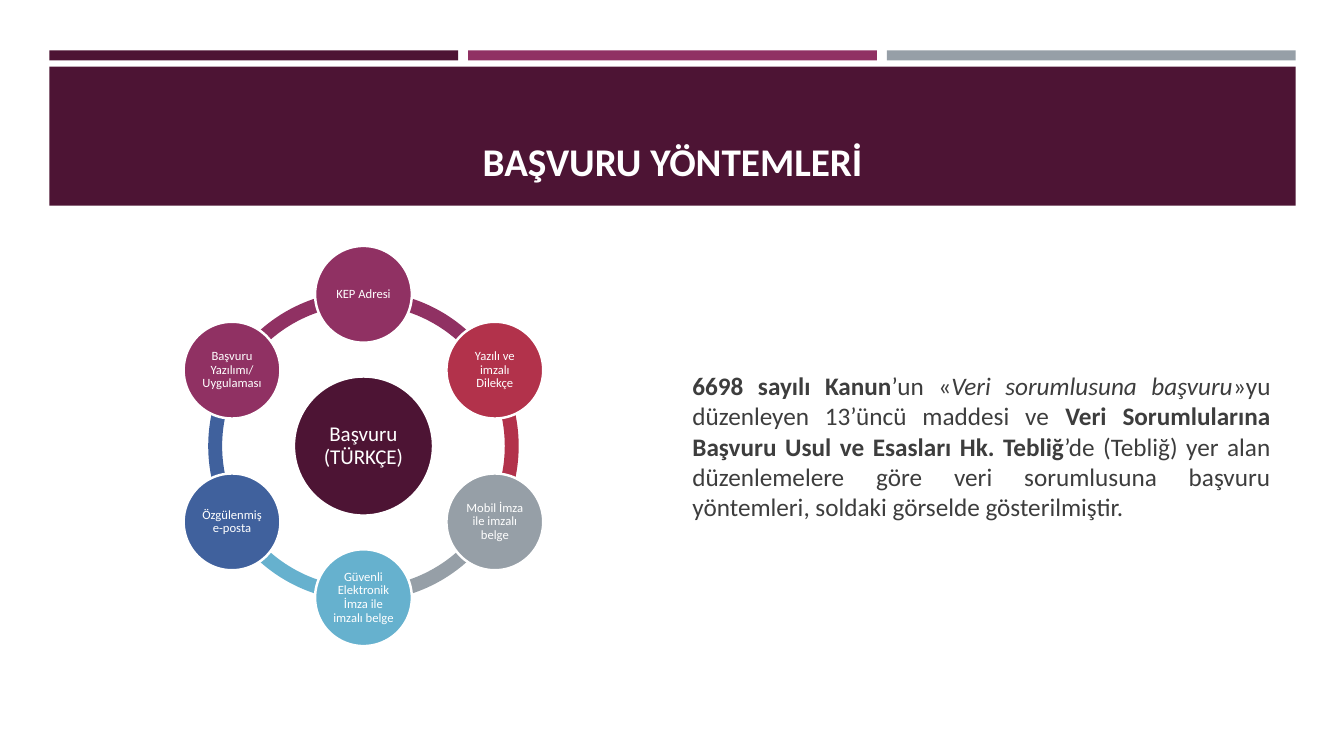
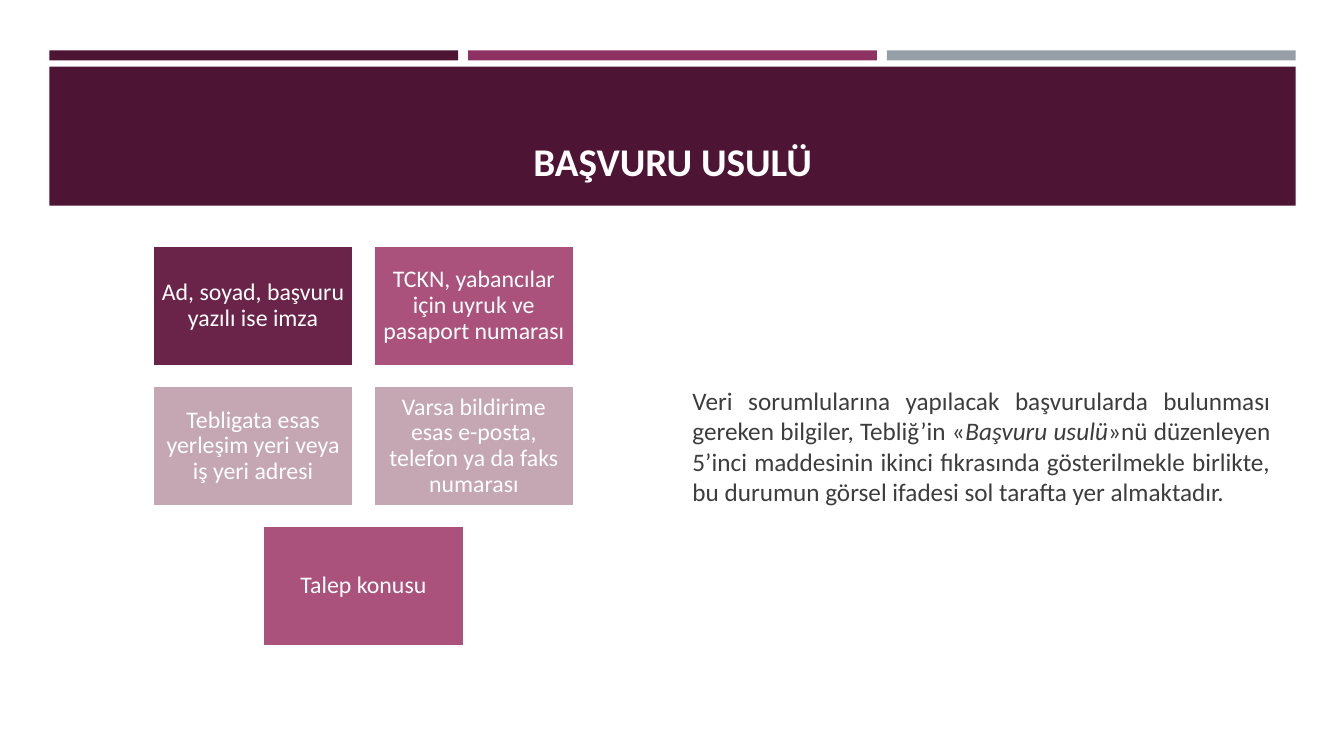
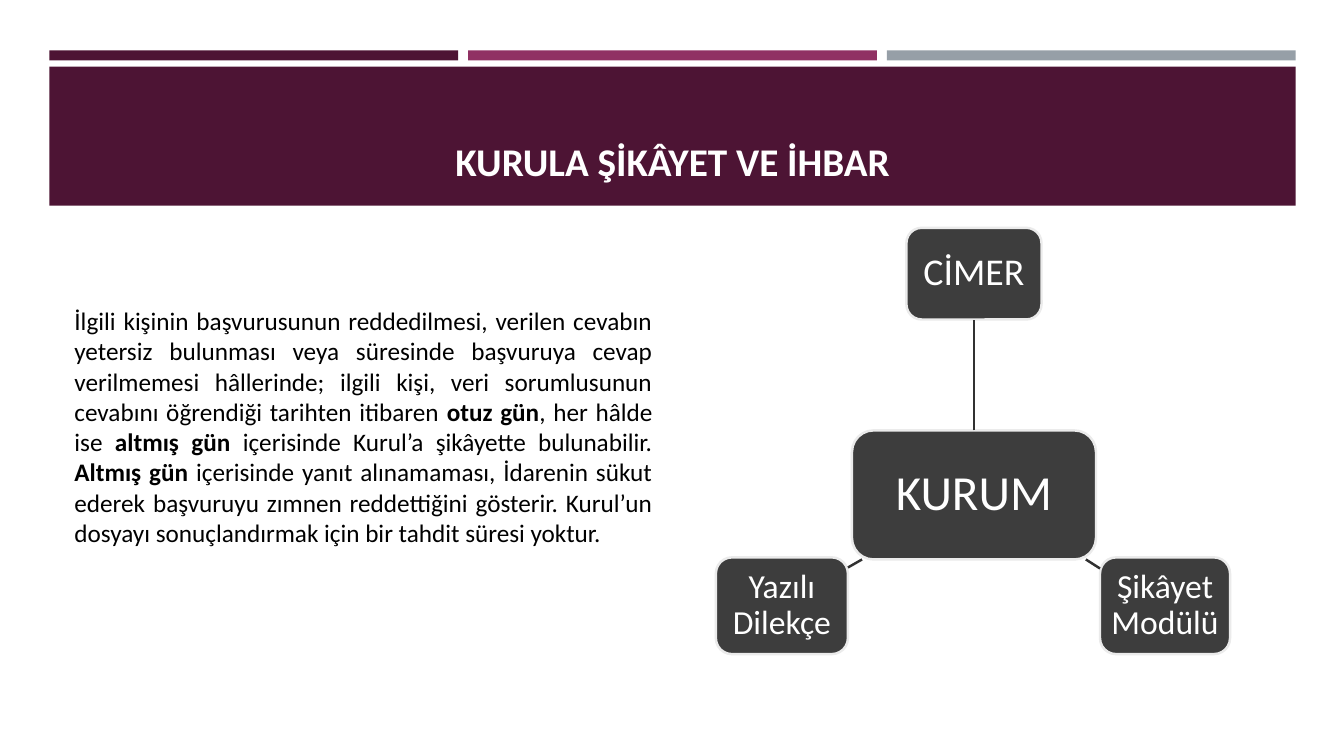
"""Build three slides on applications and complaints to the board."""
from math import cos, radians, sin

from lxml import etree
from pptx import Presentation
from pptx.dml.color import RGBColor
from pptx.enum.shapes import MSO_CONNECTOR, MSO_SHAPE
from pptx.enum.text import MSO_ANCHOR, MSO_AUTO_SIZE, PP_ALIGN
from pptx.oxml.ns import qn
from pptx.util import Pt

RECTANGLE = MSO_SHAPE.RECTANGLE
ROUNDED = MSO_SHAPE.ROUNDED_RECTANGLE
ELLIPSE = MSO_SHAPE.OVAL
ARC = MSO_SHAPE.BLOCK_ARC
STRAIGHT = MSO_CONNECTOR.STRAIGHT
CENTER, JUSTIFY = PP_ALIGN.CENTER, PP_ALIGN.JUSTIFY
MIDDLE, BOTTOM = MSO_ANCHOR.MIDDLE, MSO_ANCHOR.BOTTOM
NO_FIT = MSO_AUTO_SIZE.NONE

EMU_PER_PX = 9144
TITLE_ONLY = 5
FONT = "Calibri"
WHITE, BLACK, CHARCOAL = "FFFFFF", "000000", "3D3D3D"
PLUM, BERRY, GREY = "4D1434", "903163", "969FA7"
RED, SKY, BLUE = "B2324B", "66B1CE", "40619D"
DARK_BERRY, ROSE, PALE_ROSE = "6B2449", "AB527C", "C5A6B3"
EDGE, LINK = "EBEBEB", "313131"
BOLD, ITALIC = {"bold": True}, {"italic": True}

BAND = (49, 66, 1236, 138)
TITLE = (64, 80, 1206, 108)
LEFT_HALF = (64, 244, 593, 397)
RIGHT_HALF = (677, 244, 593, 397)
LEFT_TEXT = (64, 244, 593, 358)
HUB = (710, 226, 510, 423)

METHODS = [
    ("KEP Adresi", BERRY),
    ("Yazılı ve imzalı Dilekçe", RED),
    ("Mobil İmza ile imzalı belge", GREY),
    ("Güvenli Elektronik İmza ile imzalı belge", SKY),
    ("Özgülenmiş e-posta", BLUE),
    ("Başvuru Yazılımı/ Uygulaması", BERRY),
]
METHODS_TEXT = [
    ("6698 sayılı Kanun", BOLD),
    ("’un «", {}),
    ("Veri sorumlusuna başvuru", ITALIC),
    ("»yu düzenleyen 13’üncü maddesi ve ", {}),
    ("Veri Sorumlularına Başvuru Usul ve Esasları Hk. Tebliğ", BOLD),
    ("’de (Tebliğ) yer alan düzenlemelere göre veri sorumlusuna başvuru "
     "yöntemleri, soldaki görselde gösterilmiştir.", {}),
]
DETAILS = [
    ("Ad, soyad, başvuru yazılı ise imza", DARK_BERRY),
    ("TCKN, yabancılar için uyruk ve pasaport numarası", ROSE),
    ("Tebligata esas yerleşim yeri veya iş yeri adresi", PALE_ROSE),
    ("Varsa bildirime esas e-posta, telefon ya da faks numarası", PALE_ROSE),
    ("Talep konusu", ROSE),
]
DETAILS_TEXT = [
    ("Veri sorumlularına yapılacak başvurularda bulunması gereken bilgiler, "
     "Tebliğ’in «", {}),
    ("Başvuru usulü", ITALIC),
    ("»nü düzenleyen 5’inci maddesinin ikinci fıkrasında gösterilmekle "
     "birlikte, bu durumun görsel ifadesi sol tarafta yer almaktadır.", {}),
]
COMPLAINT_TEXT = [
    ("İlgili kişinin başvurusunun reddedilmesi, verilen cevabın yetersiz "
     "bulunması veya süresinde başvuruya cevap verilmemesi hâllerinde; ilgili "
     "kişi, veri sorumlusunun cevabını öğrendiği tarihten itibaren ", {}),
    ("otuz gün", BOLD),
    (", her hâlde ise ", {}),
    ("altmış gün", BOLD),
    (" içerisinde Kurul’a şikâyette bulunabilir. ", {}),
    ("Altmış gün ", BOLD),
    ("içerisinde yanıt alınamaması, İdarenin sükut ederek başvuruyu zımnen "
     "reddettiğini gösterir. Kurul’un dosyayı sonuçlandırmak için bir tahdit "
     "süresi yoktur.", {}),
]


def px(length):
    """Turn px into EMU."""
    return round(length * EMU_PER_PX)


def color(value):
    """Turn a hex string into a colour."""
    return RGBColor.from_string(value)


def write(shape, spans, size=18, fill=WHITE, align=CENTER, anchor=MIDDLE,
          inset=None, spacing=None, after=None, bold=False):
    """Fill a shape with one paragraph of plain or mixed spans."""
    frame = shape.text_frame
    frame.word_wrap, frame.auto_size = True, NO_FIT
    frame.vertical_anchor = anchor
    if inset is not None:
        frame.margin_left = frame.margin_right = px(inset)
        frame.margin_top = frame.margin_bottom = px(inset)
    para = frame.paragraphs[0]
    para.alignment = align
    if spacing is not None:
        para.line_spacing = spacing
    if after is not None:
        para.space_after = Pt(after)
    for text, style in [(spans, {})] if isinstance(spans, str) else spans:
        span = para.add_run()
        span.text = text
        font = span.font
        font.name, font.size = FONT, Pt(size)
        font.bold = style.get("bold", bold)
        font.italic = style.get("italic", False)
        font.color.rgb = color(fill)


def add_block(page, kind, box, fill, line=None):
    """Add a flat preset shape."""
    block = page.shapes.add_shape(kind, *map(px, box))
    block.shadow.inherit = False
    block.fill.solid()
    block.fill.fore_color.rgb = color(fill)
    if line:
        block.line.color.rgb = color(line)
        block.line.width = Pt(1.75)
    else:
        block.line.fill.background()
    return block


def add_label(page, kind, box, text, size, fill, inset, line=WHITE):
    """Add an outlined shape with centred text."""
    block = add_block(page, kind, box, fill, line)
    write(block, text, size=size, inset=inset, spacing=0.9)
    return block


def add_link(page, start, end):
    """Add a straight line between two points."""
    link = page.shapes.add_connector(STRAIGHT, *map(px, start + end))
    link.line.color.rgb = color(LINK)
    link.line.width = Pt(1.75)
    etree.SubElement(link.element.spPr, qn("a:effectLst"))
    return link


def add_page(deck, heading):
    """Add a page with the three stripes, the band and its title."""
    page = deck.slides.add_slide(deck.slide_layouts[TITLE_ONLY])
    left, top, width, _ = BAND
    gap = 10
    stripe = (width - 2 * gap) / 3
    for index, fill in enumerate((PLUM, BERRY, GREY)):
        box = (left + index * (stripe + gap), top - 16, stripe, 10)
        add_block(page, RECTANGLE, box, fill)
    add_block(page, RECTANGLE, BAND, PLUM)
    title = page.shapes.title
    title.left, title.top, title.width, title.height = map(px, TITLE)
    write(title, heading, size=28, bold=True, anchor=BOTTOM)
    page.shapes.element.append(title.element)
    return page


def add_body(page, box, spans, fill=CHARCOAL):
    """Add the justified body text."""
    body = page.shapes.add_textbox(*map(px, box))
    write(body, spans, fill=fill, align=JUSTIFY, after=6)


def add_ring(page, box, center_text, nodes):
    """Add a ring of nodes, each followed by an arc, around a centre."""
    left, top, width, height = box
    middle_x, middle_y = left + width / 2, top + height / 2
    node_size, center_size, ring_size = 96, 138, 308
    orbit = (height - node_size) / 2
    step = 360 / len(nodes)

    def square(size, x=middle_x, y=middle_y):
        """Return a square box around a point."""
        return x - size / 2, y - size / 2, size, size

    angles = [(270 + index * step) % 360 for index in range(len(nodes))]
    for angle, (_, fill) in zip(angles, nodes):
        arc = add_block(page, ARC, square(ring_size), fill)
        arc.adjustments[0] = angle * 0.6
        arc.adjustments[1] = (angle + step) % 360 * 0.6
        arc.adjustments[2] = 0.045
    add_label(page, ELLIPSE, square(center_size), center_text, 15, PLUM, 2)
    for angle, (text, fill) in zip(angles, nodes):
        x = middle_x + orbit * cos(radians(angle))
        y = middle_y + orbit * sin(radians(angle))
        add_label(page, ELLIPSE, square(node_size, x, y), text, 9, fill, 1)


def add_grid(page, box, cells):
    """Add cells two to a row, each row centred in the box."""
    left, top, width, _ = box
    cell_width, cell_height, gap, columns = 199, 119, 20, 2
    for start in range(0, len(cells), columns):
        row = cells[start:start + columns]
        row_width = len(row) * (cell_width + gap) - gap
        row_left = left + (width - row_width) / 2
        y = top + start // columns * (cell_height + gap)
        for index, (text, fill) in enumerate(row):
            x = row_left + index * (cell_width + gap)
            add_label(page, RECTANGLE, (x, y, cell_width, cell_height),
                      text, 17, fill, 7)


def add_hub(page, box):
    """Add the authority and the three channels linked to it."""
    left, top, _, _ = box

    def place(x, y, width, height, text, size):
        """Add a rounded label at an offset in the box."""
        return add_label(page, ROUNDED, (left + x, top + y, width, height),
                         text, size, CHARCOAL, 3, EDGE)

    authority = place(135, 201, 242, 128, "KURUM", 35)
    portal = place(189, 0, 134, 91, "CİMER", 27)
    place(381, 327, 129, 96, "Şikâyet Modülü", 24)
    place(0, 327, 131, 96, "Yazılı Dilekçe", 24)
    stem = add_link(page, (left + 256, top + 201), (left + 256, top + 91))
    stem.begin_connect(authority, 0)
    stem.end_connect(portal, 2)
    add_link(page, (left + 367, top + 329), (left + 381, top + 338))
    add_link(page, (left + 145, top + 329), (left + 131, top + 337))


def main():
    """Build and save the deck."""
    deck = Presentation()
    deck.slide_width, deck.slide_height = px(1333), px(750)

    page = add_page(deck, "BAŞVURU YÖNTEMLERİ")
    add_ring(page, LEFT_HALF, "Başvuru (TÜRKÇE)", METHODS)
    add_body(page, RIGHT_HALF, METHODS_TEXT)

    page = add_page(deck, "BAŞVURU USULÜ")
    add_grid(page, LEFT_HALF, DETAILS)
    add_body(page, RIGHT_HALF, DETAILS_TEXT)

    page = add_page(deck, "KURULA ŞİKÂYET VE İHBAR")
    add_body(page, LEFT_TEXT, COMPLAINT_TEXT, fill=BLACK)
    add_hub(page, HUB)

    deck.save("out.pptx")


if __name__ == "__main__":
    main()
